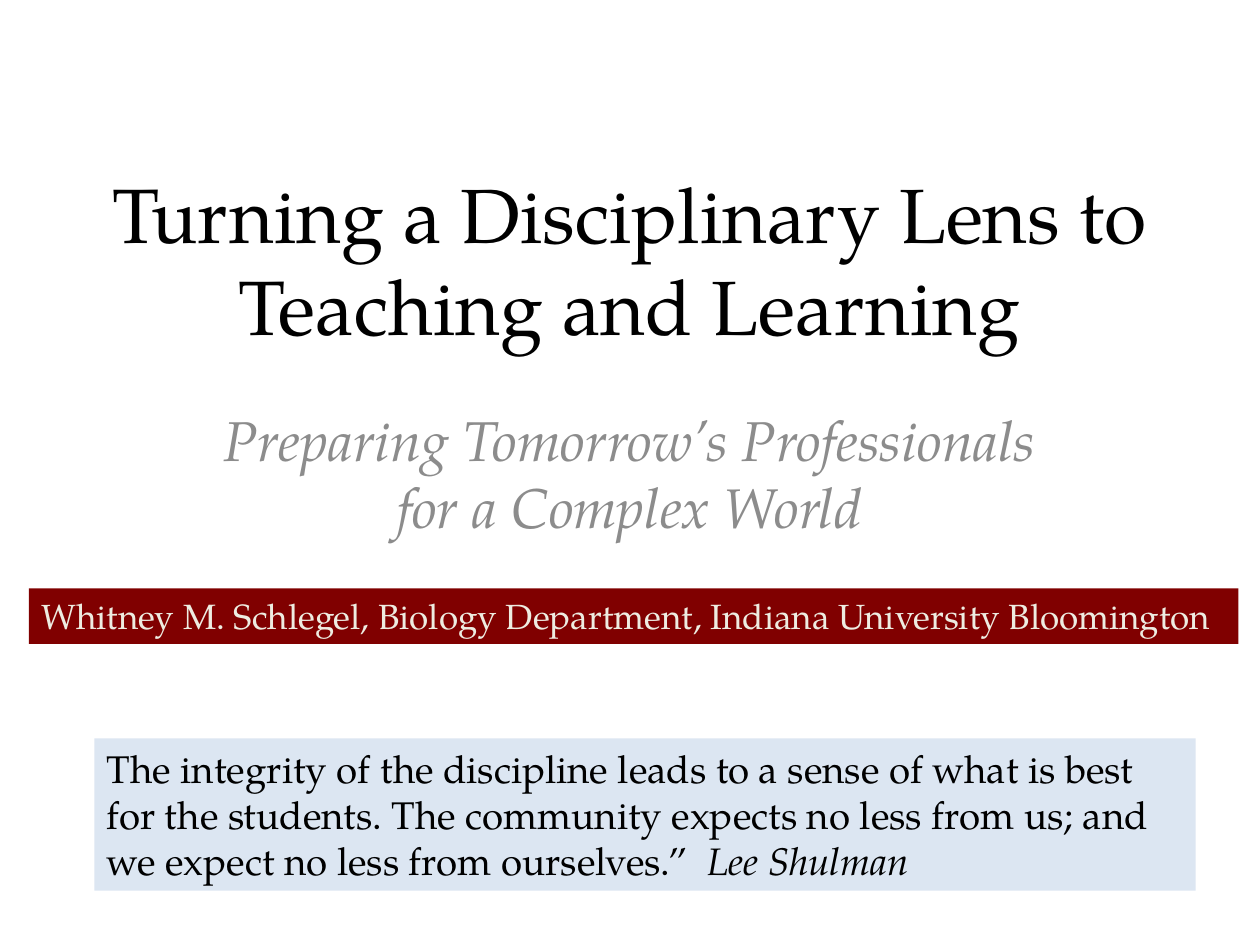
"""Build the title slide on a disciplinary lens for teaching and learning."""
from pptx import Presentation
from pptx.dml.color import RGBColor
from pptx.enum import shapes, text
from pptx.util import Inches, Pt

FONT = "TeX Gyre Pagella"
HUES = {"ink": "000000", "gray": "8C8C8C", "pale": "DCE6F2",
        "red": "800000", "cream": "EEECE1"}
TITLE = "Turning a Disciplinary Lens to Teaching and Learning"
SUB = "Preparing Tomorrow’s Professionals for a Complex World"
QUOTE = ("The integrity of the discipline leads to a sense of what is best "
         "for the students. The community expects no less from us; and "
         "we expect no less from ourselves.”  ")
SOURCE = "Lee Shulman"
AUTHOR = "Whitney M. Schlegel, Biology Department, Indiana University Bloomington"
HEADS = [
    (TITLE, (0.75, 1.25, 8.5, 1.61), 44, "ink", False, text.MSO_ANCHOR.MIDDLE),
    (SUB, (1.5, 3.17, 7, 1.24), 32, "gray", True, text.MSO_ANCHOR.TOP),
]
BANDS = [
    ([(QUOTE, False), (SOURCE, True)], (0.75, 5.86, 8.74, 1.21), 22, "ink", "pale", True),
    ([(AUTHOR, False)], (0.23, 4.67, 9.6, 0.44), 20, "cream", "red", False),
]


def hue(name):
    return RGBColor.from_string(HUES[name])


def style(para, size, ink, align):
    para.alignment = align
    font = para.font
    font.name, font.size = FONT, Pt(size)
    font.color.rgb = hue(ink)


def head(shape, words, box, size, ink, slant, anchor):
    shape.left, shape.top, shape.width, shape.height = map(Inches, box)
    frame = shape.text_frame
    frame.text = words
    frame.word_wrap = True
    frame.auto_size = text.MSO_AUTO_SIZE.NONE
    frame.vertical_anchor = anchor
    para = frame.paragraphs[0]
    style(para, size, ink, text.PP_ALIGN.CENTER)
    para.font.italic = slant


def band(slide, parts, box, size, ink, fill, wrap):
    shape = slide.shapes.add_shape(shapes.MSO_SHAPE.RECTANGLE, *map(Inches, box))
    shape.shadow.inherit = False
    shape.fill.solid()
    shape.fill.fore_color.rgb = hue(fill)
    shape.line.fill.background()
    frame = shape.text_frame
    frame.word_wrap = wrap
    frame.auto_size = text.MSO_AUTO_SIZE.SHAPE_TO_FIT_TEXT
    frame.vertical_anchor = text.MSO_ANCHOR.TOP
    para = frame.paragraphs[0]
    style(para, size, ink, text.PP_ALIGN.LEFT)
    for words, slant in parts:
        run = para.add_run()
        run.text = words
        run.font.italic = slant


def main():
    deck = Presentation()
    deck.slide_width, deck.slide_height = Inches(10), Inches(7.5)
    slide = deck.slides.add_slide(deck.slide_layouts[0])
    for shape, spec_row in zip(slide.placeholders, HEADS):
        head(shape, *spec_row)
    for row in BANDS:
        band(slide, *row)
    deck.save("out.pptx")


if __name__ == "__main__":
    main()
